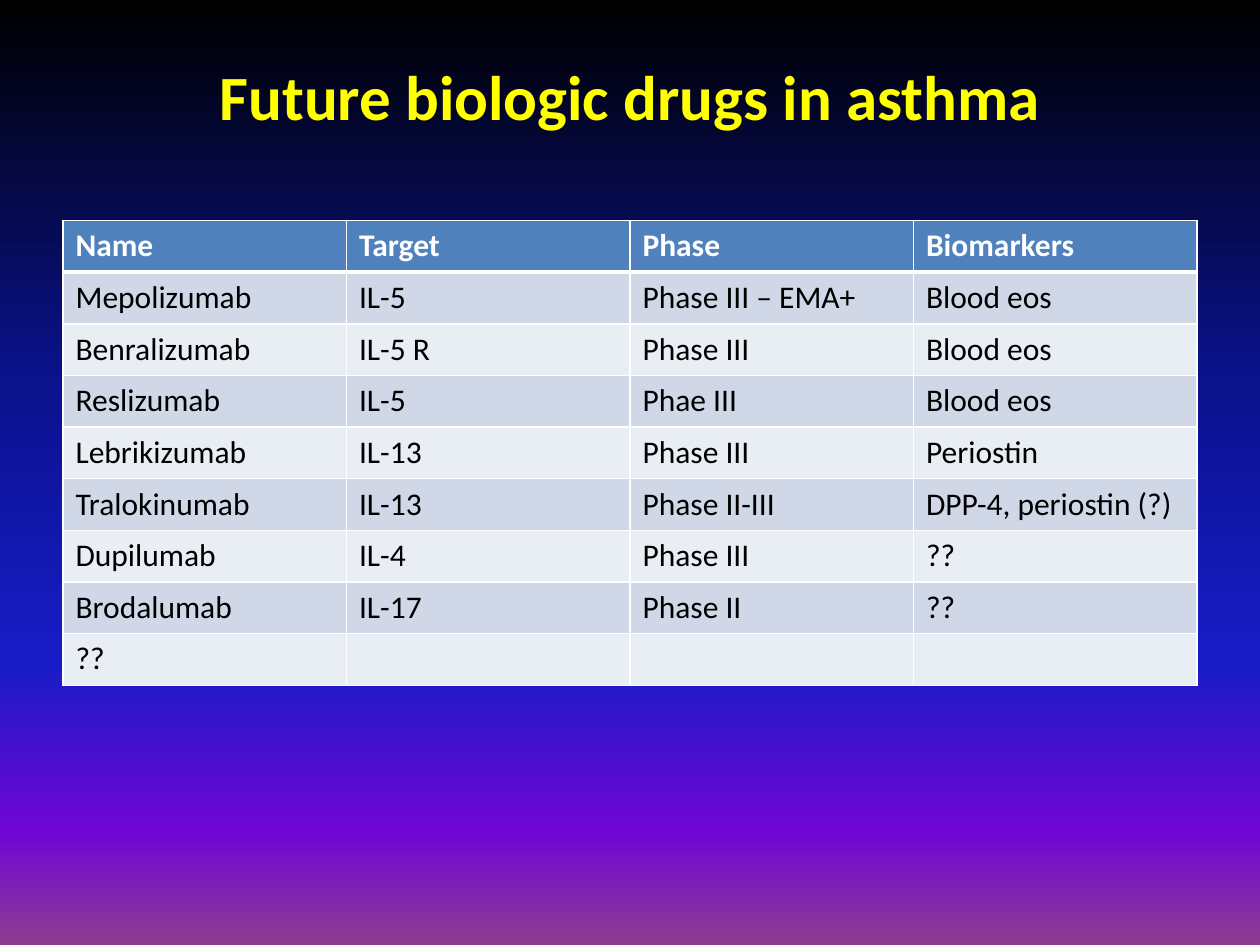
from dataclasses import dataclass
from typing import NamedTuple

from lxml.etree import SubElement as Sub
from pptx import Presentation
from pptx.dml.color import RGBColor as Rgb
from pptx.enum.text import MSO_ANCHOR as Anchor, PP_ALIGN as Align
from pptx.oxml.ns import qn
from pptx.util import Emu, Inches, Pt


class Stop(NamedTuple):
    share: int
    color: str


class Style(NamedTuple):
    size: int
    color: str
    bold: bool = False


@dataclass(frozen=True)
class Theme:
    font: str = "Calibri"
    title: Style = Style(36, "FFFF00", True)
    head: Style = Style(18, "FFFFFF", True)
    body: Style = Style(18, "000000")
    fill: str = "4F81BD"
    bands: tuple[str, str] = ("D0D8E8", "E9EDF4")
    line: str = "FFFFFF"
    thin: int = 1
    thick: int = 3
    stops: tuple[Stop, ...] = (
        Stop(0, "000000"), Stop(40, "0A128C"), Stop(70, "181CC7"),
        Stop(88, "7005D4"), Stop(100, "8C3D91"))


THEME = Theme()
WIDE, HIGH = Inches(10), Inches(7.5)
EDGE = 0.05  # side margin, as a share of the width
ROW = Inches(0.41)
TITLE = "Future biologic drugs in asthma"
DRUGS = (
    ("Name", "Target", "Phase", "Biomarkers"),
    ("Mepolizumab", "IL-5", "Phase III – EMA+", "Blood eos"),
    ("Benralizumab", "IL-5 R", "Phase III", "Blood eos"),
    ("Reslizumab", "IL-5", "Phae III", "Blood eos"),
    ("Lebrikizumab", "IL-13", "Phase III", "Periostin"),
    ("Tralokinumab", "IL-13", "Phase II-III", "DPP-4, periostin (?)"),
    ("Dupilumab", "IL-4", "Phase III", "??"),
    ("Brodalumab", "IL-17", "Phase II", "??"),
    ("??", "", "", ""),
)


def tint(parent, color: str) -> None:
    Sub(parent, qn("a:srgbClr"), val=color)


def write(frame, text: str, style: Style) -> None:
    frame.text = text
    for run in frame.paragraphs[0].runs:
        font = run.font
        font.name, font.size, font.bold = THEME.font, Pt(style.size), style.bold
        font.color.rgb = Rgb.from_string(style.color)


def paint_back(slide) -> None:
    fill = slide.background.fill
    fill.gradient()
    fill.gradient_angle = 270
    stops = next(slide.element.iter(qn("a:gsLst")))
    for old in list(stops):
        stops.remove(old)
    for stop in THEME.stops:
        tint(Sub(stops, qn("a:gs"), pos=str(stop.share * 1000)), stop.color)


def add_title(slide) -> None:
    box = slide.shapes.add_textbox(
        Emu(int(WIDE * EDGE)), Inches(0.13), Emu(int(WIDE * (1 - 2 * EDGE))), Inches(1.25))
    frame = box.text_frame
    frame.word_wrap = True
    frame.vertical_anchor = Anchor.MIDDLE
    write(frame, TITLE, THEME.title)
    frame.paragraphs[0].alignment = Align.CENTER


def rule_cell(cell, row: int) -> None:
    """Draw the cell borders, with a thick rule below the header."""
    props = cell._tc.get_or_add_tcPr()
    heavy = {0: "B", 1: "T"}.get(row)
    for side in "LRTB":
        size = THEME.thick if side == heavy else THEME.thin
        line = Sub(props, qn(f"a:ln{side}"), w=str(Pt(size)))
        tint(Sub(line, qn("a:solidFill")), THEME.line)


def add_drugs(slide) -> None:
    count = len(DRUGS)
    table = slide.shapes.add_table(
        count, len(DRUGS[0]), Emu(int(WIDE * EDGE)), Inches(1.75),
        Emu(int(WIDE * (1 - 2 * EDGE))), ROW * count).table
    for row, texts in enumerate(DRUGS):
        style = THEME.body if row else THEME.head
        color = THEME.bands[(row - 1) % 2] if row else THEME.fill
        for col, text in enumerate(texts):
            cell = table.cell(row, col)
            rule_cell(cell, row)
            cell.fill.solid()
            cell.fill.fore_color.rgb = Rgb.from_string(color)
            write(cell.text_frame, text, style)


def main() -> None:
    deck = Presentation()
    deck.slide_width, deck.slide_height = WIDE, HIGH
    slide = deck.slides.add_slide(deck.slide_layouts[6])
    paint_back(slide)
    add_title(slide)
    add_drugs(slide)
    deck.save("out.pptx")


if __name__ == "__main__":
    main()
